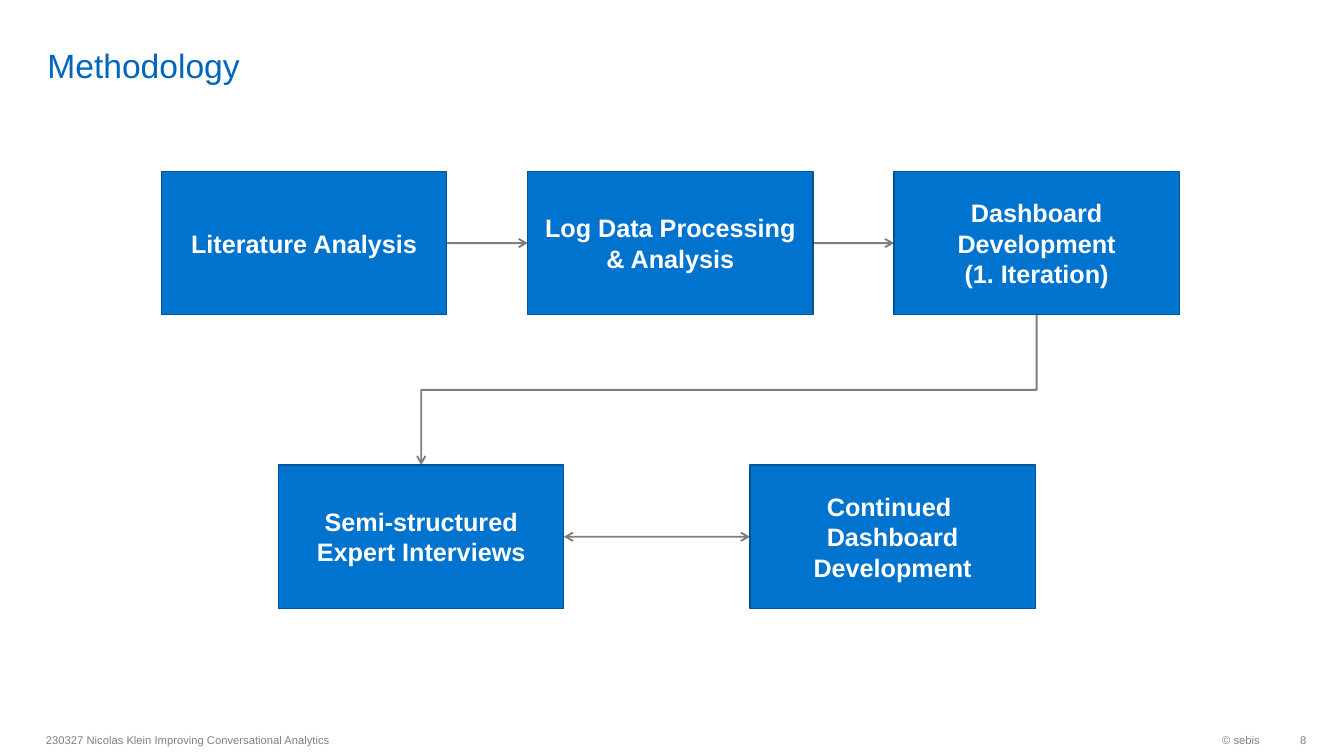
from lxml.etree import SubElement as Sub
from pptx import Presentation
from pptx.dml.color import RGBColor as Rgb
from pptx.enum.shapes import MSO_CONNECTOR as Con, MSO_SHAPE as Geo
from pptx.enum.text import MSO_ANCHOR as Mid, PP_ALIGN as Al
from pptx.oxml.ns import qn
from pptx.util import Cm, Pt

TOP, LEFT, LOW, RIGHT = range(4)
WIDE, HIGH = 7.19, 3.61


def tint(form, hue):
    """Give a fill or font colour format a solid hex colour."""
    form.rgb = Rgb.from_string(hue)


def write(shape, text, size, hue, bold=False, side=Al.LEFT, mid=Mid.MIDDLE):
    """Fill a shape with text and format every run."""
    frame = shape.text_frame
    frame.text = text
    frame.word_wrap = True
    frame.vertical_anchor = mid
    for para in frame.paragraphs:
        para.alignment = side
        for run in para.runs:
            run.font.name = "Arial"
            run.font.size = Pt(size)
            run.font.bold = bold
            tint(run.font.color, hue)


def head(slide, text):
    """Place and format the slide title."""
    title = slide.shapes.title
    title.left, title.top = Cm(0.94), Cm(0.13)
    title.width, title.height = Cm(29.41), Cm(2.01)
    write(title, text, 24, "0065BD", mid=Mid.BOTTOM)
    title.text_frame.margin_top = title.text_frame.margin_bottom = 0


def note(slide, text, x, wide, side):
    """Add a small grey footer text and return its box."""
    box = slide.shapes.add_textbox(Cm(x), Cm(18.25), Cm(wide), Cm(0.81))
    write(box, text, 8, "808080", side=side)
    return box


def step(slide, text, x, y):
    """Add one blue box of the process."""
    box = slide.shapes.add_shape(Geo.RECTANGLE, Cm(x), Cm(y), Cm(WIDE), Cm(HIGH))
    box.shadow.inherit = False
    box.fill.solid()
    tint(box.fill.fore_color, "0073CF")
    tint(box.line.color, "005599")
    box.line.width = Pt(0.85)
    write(box, text, 18, "FFFFFF", True, Al.CENTER)
    return box


def link(slide, kind, start, out, end, into, both=False):
    """Join two boxes with a half-transparent arrow."""
    line = slide.shapes.add_connector(kind, 0, 0, 0, 0)
    line.begin_connect(start, out)
    line.end_connect(end, into)
    line.line.width = Pt(1.35)
    tint(line.line.color, "000000")
    props = line._element.spPr
    Sub(props.find(".//" + qn("a:srgbClr")), qn("a:alpha"), val="50000")
    stroke = props.find(qn("a:ln"))
    if both:
        Sub(stroke, qn("a:headEnd"), type="arrow")
    Sub(stroke, qn("a:tailEnd"), type="arrow")
    Sub(props, qn("a:effectLst"))
    return line


def turn(line):
    """Rotate an elbow so that it leaves downwards and runs to the left."""
    wide, high = line.width, line.height
    shift = (wide - high) // 2
    line.left, line.top = line.left + shift, line.top - shift
    line.width, line.height = high, wide
    frame = line._element.spPr.find(qn("a:xfrm"))
    frame.attrib.pop("flipH", None)
    frame.set("rot", "5400000")


def main():
    """Build the methodology slide."""
    deck = Presentation()
    deck.slide_width, deck.slide_height = Cm(33.87), Cm(19.05)
    slide = deck.slides.add_slide(deck.slide_layouts[5])
    head(slide, "Methodology")

    note(slide, "© sebis", 26.06, 5.94, Al.RIGHT)
    note(slide, "230327 Nicolas Klein Improving Conversational Analytics",
         0.91, 16, Al.LEFT)
    page = note(slide, "8", 32, 0.92, Al.RIGHT)
    page.text_frame.margin_right = 0

    names = ["Literature Analysis", "Log Data Processing & Analysis",
             "Dashboard Development\n(1. Iteration)"]
    read, log, dash = [step(slide, name, 4.07 + 9.23 * i, 4.32)
                       for i, name in enumerate(names)]
    talk = step(slide, "Semi-structured Expert Interviews", 7.02, 11.72)
    more = step(slide, "Continued \nDashboard Development", 18.9, 11.72)

    for start, end, both in [(read, log, False), (log, dash, False),
                             (talk, more, True)]:
        link(slide, Con.STRAIGHT, start, RIGHT, end, LEFT, both)
    turn(link(slide, Con.ELBOW, dash, LOW, talk, TOP))
    deck.save("out.pptx")


if __name__ == "__main__":
    main()
